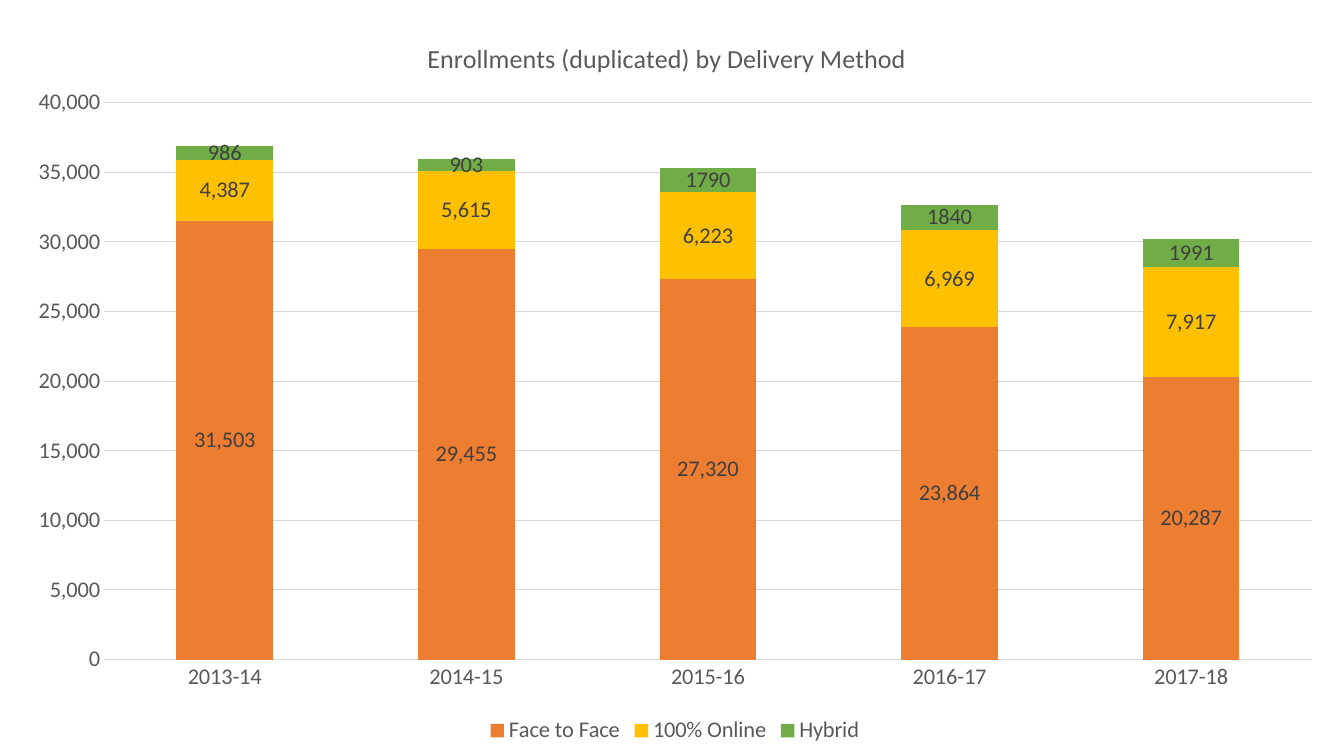
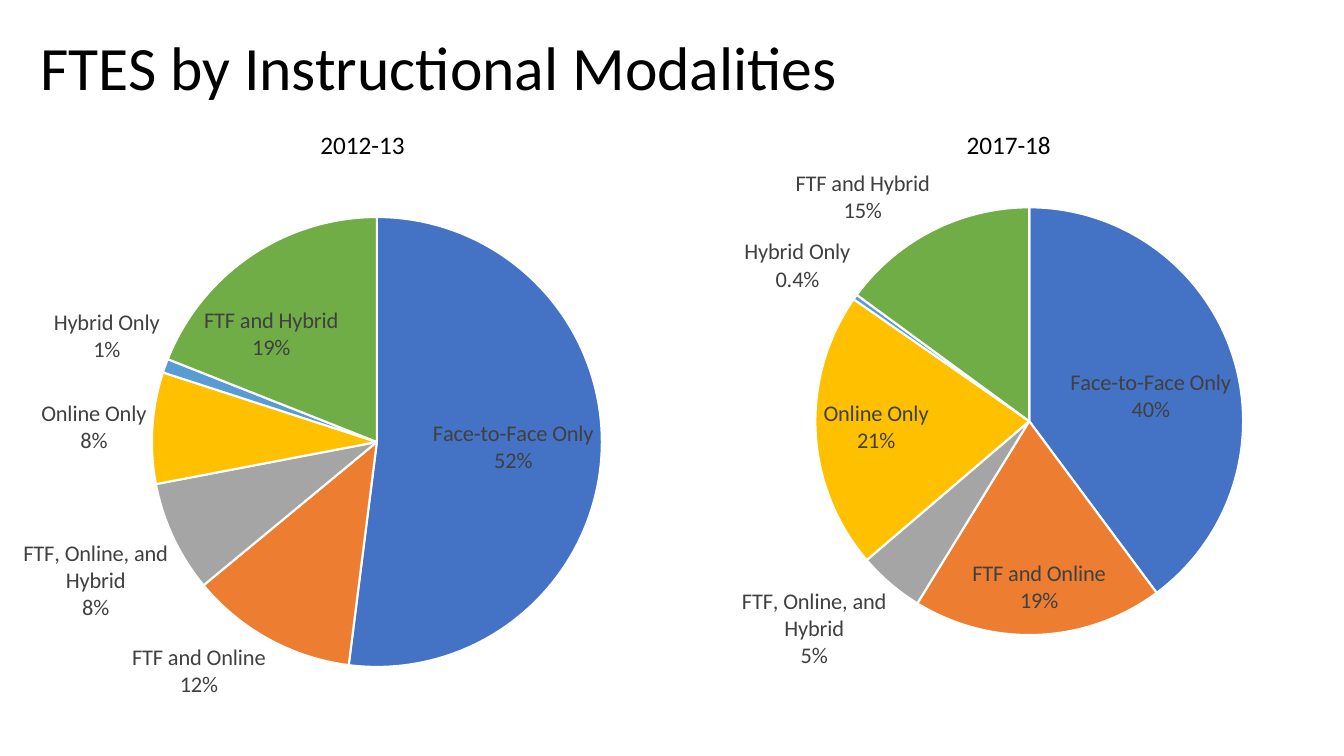
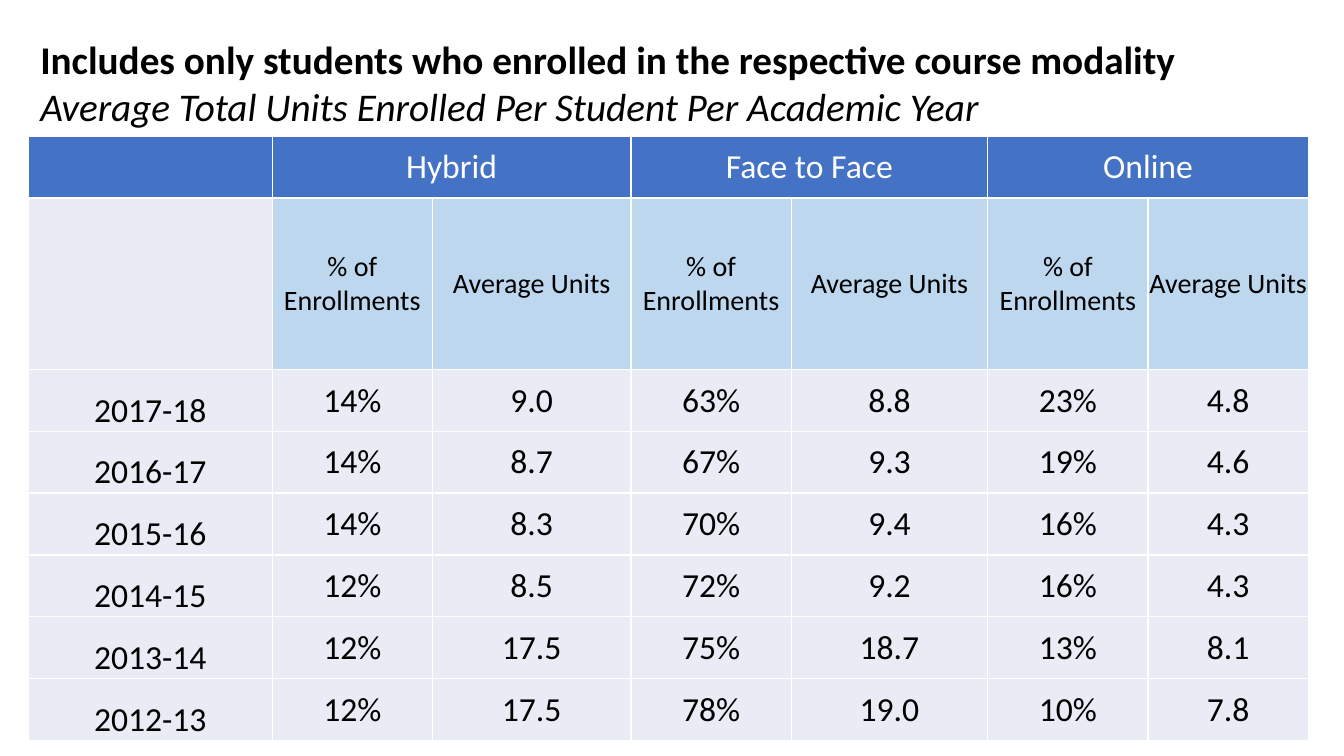
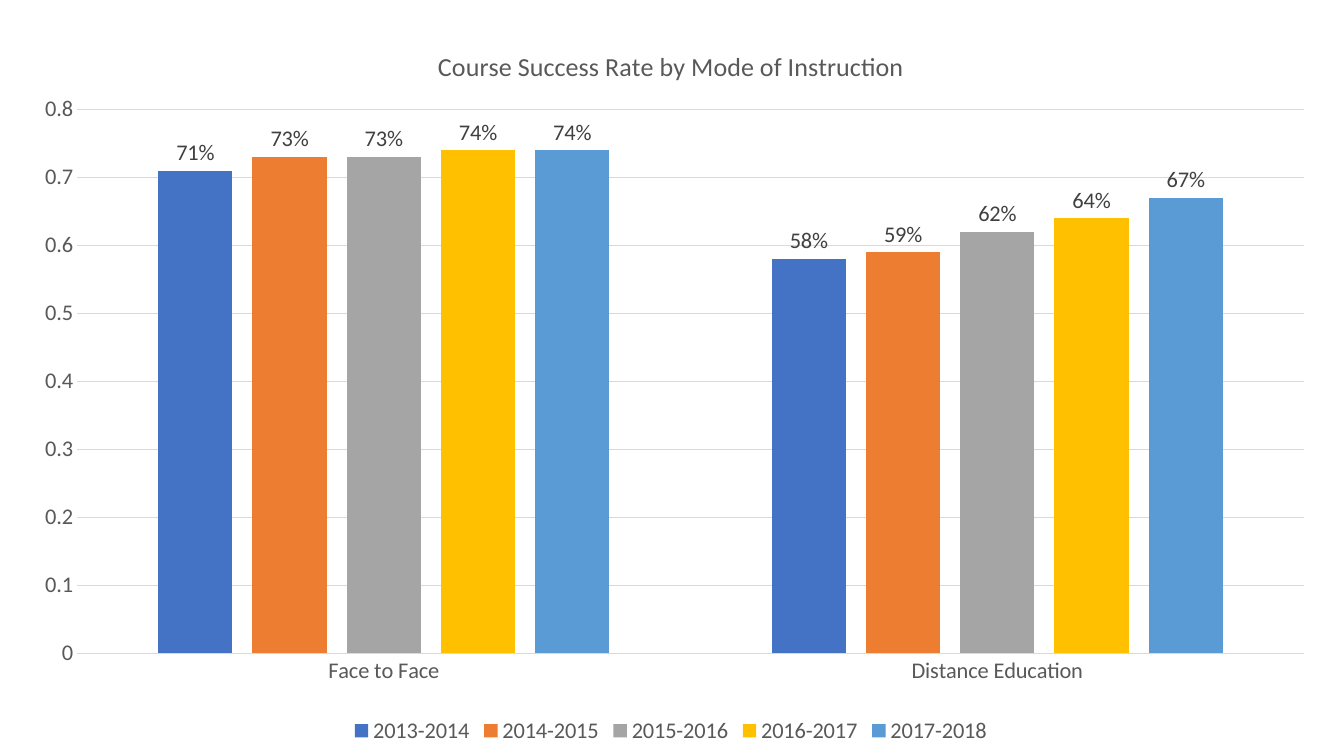
import lxml.etree
import pptx
import pptx.chart.data
import pptx.dml.color
import pptx.enum.chart
import pptx.enum.text
import pptx.oxml.ns
import pptx.util

Pt = pptx.util.Pt
qn = pptx.oxml.ns.qn
CHART = pptx.enum.chart.XL_CHART_TYPE
LABEL = pptx.enum.chart.XL_LABEL_POSITION
ANCHOR = pptx.enum.text.MSO_ANCHOR
ALIGN = pptx.enum.text.PP_ALIGN

FONT = "Calibri"
COLORS = {
    "black": "000000", "white": "FFFFFF", "grid": "D9D9D9",
    "axis": "595959", "label": "404040",
    "blue": "4472C4", "orange": "ED7D31", "gray": "A5A5A5",
    "gold": "FFC000", "sky": "5B9BD5", "green": "70AD47",
    "subhead": "BDD7EE", "cell": "E9EBF5",
}
TITLE_ONLY, BLANK = 5, 6

ENROLLMENTS = {
    "title": "Enrollments (duplicated) by Delivery Method",
    "title_at": (0.31, 0.04),
    "type": CHART.COLUMN_STACKED,
    "box": (7.9, 4.3, 948.2, 530.6),
    "plot": (0.07, 0.13, 0.91, 0.75),
    "categories": ["2013-14", "2014-15", "2015-16", "2016-17", "2017-18"],
    "series": [
        ("Face to Face", [31503, 29455, 27320, 23864, 20287], "orange", "#,##0"),
        ("100% Online", [4387, 5615, 6223, 6969, 7917], "gold", "#,##0"),
        ("Hybrid", [986, 903, 1790, 1840, 1991], "green", "General"),
    ],
    "gap": 150, "overlap": 100, "label_position": LABEL.CENTER,
    "axis": (40000, 5000, "#,##0"),
}
SUCCESS = {
    "title": "Course Success Rate by Mode of Instruction",
    "title_at": (0.32, 0.04),
    "type": CHART.COLUMN_CLUSTERED,
    "box": (7.9, 10.1, 942.5, 524.9),
    "plot": (0.05, 0.13, 0.93, 0.74),
    "categories": ["Face to Face", "Distance Education"],
    "series": [
        ("2013-2014", [0.71, 0.58], "blue", "0%"),
        ("2014-2015", [0.73, 0.59], "orange", "0%"),
        ("2015-2016", [0.73, 0.62], "gray", "0%"),
        ("2016-2017", [0.74, 0.64], "gold", "0%"),
        ("2017-2018", [0.74, 0.67], "sky", "0%"),
    ],
    "gap": 219, "overlap": -27, "label_position": LABEL.OUTSIDE_END,
    "axis": (0.8, 0.1, "General"),
}

MODALITIES_TITLE = "FTES by Instructional Modalities"
MODALITIES = [
    ("Face-to-Face Only", "blue"), ("FTF and Online", "orange"),
    ("FTF, Online, and Hybrid", "gray"), ("Online Only", "gold"),
    ("Hybrid Only", "sky"), ("FTF and Hybrid", "green"),
]
PIES = [
    {"year": "2012-13", "year_left": 221.8, "box": (-32.4, 117.4, 563.8, 396.7),
     "plot": (0.25, 0.09, 0.57, 0.82), "values": [52, 12, 8, 8, 1, 19],
     "own_labels": {}},
    {"year": "2017-18", "year_left": 683.3, "box": (435.6, 103.7, 587.5, 402.5),
     "plot": (0.25, 0.11, 0.52, 0.76), "values": [40, 19, 5, 21, 0.4, 15],
     "own_labels": {4: "Hybrid Only\n0.4%"}},
]

UNITS_TITLE = ("Includes only students who enrolled in the respective course modality",
               "Average Total Units Enrolled Per Student Per Academic Year")
MODES = ["Hybrid", "Face to Face", "Online"]
MEASURES = ["% of Enrollments", "Average Units"]
UNITS = [
    ("2017-18", "14%", "9.0", "63%", "8.8", "23%", "4.8"),
    ("2016-17", "14%", "8.7", "67%", "9.3", "19%", "4.6"),
    ("2015-16", "14%", "8.3", "70%", "9.4", "16%", "4.3"),
    ("2014-15", "12%", "8.5", "72%", "9.2", "16%", "4.3"),
    ("2013-14", "12%", "17.5", "75%", "18.7", "13%", "8.1"),
    ("2012-13", "12%", "17.5", "78%", "19.0", "10%", "7.8"),
]
UNITS_LEFT, UNITS_TOP = 20.2, 97.2
UNITS_WIDTHS = [174.2, 114.5, 141.8, 114.5, 140.4, 114.5, 114.5]
UNITS_HEIGHTS = [44.2, 122.4] + [44.2] * len(UNITS)


def rgb(name):
    return pptx.dml.color.RGBColor.from_string(COLORS[name])


def points(numbers):
    return [Pt(number) for number in numbers]


def style_font(font, size, color, bold=False, italic=False):
    font.name, font.size, font.bold, font.italic = FONT, Pt(size), bold, italic
    font.color.rgb = rgb(color)


def style_paragraph(para, size, color, align=ALIGN.LEFT, bold=False, italic=False):
    para.alignment = align
    for span in para.runs:
        style_font(span.font, size, color, bold, italic)


def fill(target, color):
    target.fill.solid()
    target.fill.fore_color.rgb = rgb(color)


def set_layout(parent, index, **fractions):
    """Fix a chart part's place, as fractions of the chart area."""
    layout = parent.find(qn("c:layout"))
    if layout is None:
        layout = lxml.etree.Element(qn("c:layout"))
        parent.insert(index, layout)
    manual = lxml.etree.SubElement(layout, qn("c:manualLayout"))
    settings = {"xMode": "edge", "yMode": "edge", **fractions}
    if "w" in fractions:
        settings = {"layoutTarget": "inner", **settings}
    for name, value in settings.items():
        lxml.etree.SubElement(manual, qn("c:" + name)).set("val", str(value))


def add_chart(slide, kind, box, plot, categories, series):
    data = pptx.chart.data.CategoryChartData()
    data.categories = categories
    for name, values in series:
        data.add_series(name, values)
    chart = slide.shapes.add_chart(kind, *points(box), data).chart
    style_font(chart.font, 16, "black")
    set_layout(chart.element.find(".//" + qn("c:plotArea")), 0, **dict(zip("xywh", plot)))
    return chart


def style_labels(labels, position, number_format):
    style_font(labels.font, 16, "label")
    labels.position = position
    labels.number_format, labels.number_format_is_linked = number_format, False


def add_column_slide(deck, content):
    slide = deck.slides.add_slide(deck.slide_layouts[BLANK])
    chart = add_chart(slide, content["type"], content["box"], content["plot"],
                      content["categories"], [item[:2] for item in content["series"]])

    chart.has_title = True
    title = chart.chart_title
    title.text_frame.text = content["title"]
    style_paragraph(title.text_frame.paragraphs[0], 18.6, "axis", ALIGN.CENTER)
    set_layout(chart.element.find(".//" + qn("c:title")), 1,
               **dict(zip("xy", content["title_at"])))

    chart.has_legend = True
    chart.legend.position = pptx.enum.chart.XL_LEGEND_POSITION.BOTTOM
    chart.legend.include_in_layout = False
    style_font(chart.legend.font, 16, "axis")

    for axis in (chart.category_axis, chart.value_axis):
        axis.major_tick_mark = axis.minor_tick_mark = pptx.enum.chart.XL_TICK_MARK.NONE
        style_font(axis.tick_labels.font, 16, "axis")
    value_axis = chart.value_axis
    value_axis.minimum_scale = 0
    value_axis.maximum_scale, value_axis.major_unit, number_format = content["axis"]
    value_axis.tick_labels.number_format = number_format
    value_axis.tick_labels.number_format_is_linked = False
    value_axis.format.line.fill.background()
    for line in (chart.category_axis.format.line, value_axis.major_gridlines.format.line):
        line.color.rgb, line.width = rgb("grid"), Pt(0.75)

    plot = chart.plots[0]
    plot.vary_by_categories = False
    plot.gap_width, plot.overlap = content["gap"], content["overlap"]
    for series, (_, _, color, label_format) in zip(plot.series, content["series"]):
        fill(series.format, color)
        series.data_labels.show_value = True
        style_labels(series.data_labels, content["label_position"], label_format)


def add_pie(slide, pie):
    chart = add_chart(slide, CHART.PIE, pie["box"], pie["plot"],
                      [name for name, _ in MODALITIES], [("Series 1", pie["values"])])
    chart.has_title = chart.has_legend = False
    chart.plots[0].vary_by_categories = True
    series = chart.plots[0].series[0]
    for index, (_, color) in enumerate(MODALITIES):
        slice_format = series.points[index].format
        fill(slice_format, color)
        slice_format.line.color.rgb, slice_format.line.width = rgb("white"), Pt(1.5)

    labels = series.data_labels
    labels.show_value = False
    labels.show_category_name = labels.show_percentage = True
    style_labels(labels, LABEL.BEST_FIT, "0%")
    last_flag = chart.element.find(".//" + qn("c:dLbls") + "/" + qn("c:showBubbleSize"))
    separator = lxml.etree.Element(qn("c:separator"))
    separator.text = "\n"
    last_flag.addnext(separator)
    for index, text in pie["own_labels"].items():
        label = series.points[index].data_label
        label.text_frame.text = text
        label.position = LABEL.BEST_FIT
        for para in label.text_frame.paragraphs:
            style_paragraph(para, 16, "label", ALIGN.CENTER)


def add_titled_slide(deck, text, box, anchor):
    slide = deck.slides.add_slide(deck.slide_layouts[TITLE_ONLY])
    title = slide.shapes.title
    title.left, title.top, title.width, title.height = points(box)
    frame = title.text_frame
    frame.text = text
    frame.word_wrap, frame.vertical_anchor = True, anchor
    frame.auto_size = pptx.enum.text.MSO_AUTO_SIZE.NONE
    return slide, frame.paragraphs


def add_modalities_slide(deck):
    slide, paragraphs = add_titled_slide(
        deck, MODALITIES_TITLE, (21.6, 19.4, 828, 62.6), ANCHOR.MIDDLE)
    style_paragraph(paragraphs[0], 44, "black")
    paragraphs[0].line_spacing = 0.9
    for pie in PIES:
        add_pie(slide, pie)
    for pie in PIES:
        box = slide.shapes.add_textbox(*points((pie["year_left"], 88.6, 75.6, 28.8)))
        box.text_frame.text = pie["year"]
        box.text_frame.word_wrap = False
        style_paragraph(box.text_frame.paragraphs[0], 18, "black")


def style_cell(cell, color):
    properties = cell._tc.get_or_add_tcPr()
    for side in "LRTB":
        line = lxml.etree.SubElement(properties, qn("a:ln" + side), w=str(Pt(1)))
        solid = lxml.etree.SubElement(line, qn("a:solidFill"))
        lxml.etree.SubElement(solid, qn("a:srgbClr"), val=COLORS["white"])
    fill(cell, color)
    cell.margin_left = cell.margin_right = cell.margin_top = Pt(0.7)
    cell.margin_bottom = 0


def add_units_slide(deck):
    slide, paragraphs = add_titled_slide(
        deck, "\n".join(UNITS_TITLE), (21.6, 21.6, 912, 74.9), ANCHOR.TOP)
    style_paragraph(paragraphs[0], 28, "black", bold=True)
    style_paragraph(paragraphs[1], 28, "black", italic=True)

    header = [""] + [text for mode in MODES for text in (mode, "")]
    rows = [header, [""] + MEASURES * len(MODES), *UNITS]
    table = slide.shapes.add_table(
        len(rows), len(header),
        *points((UNITS_LEFT, UNITS_TOP, sum(UNITS_WIDTHS), sum(UNITS_HEIGHTS)))).table
    table.first_row = table.horz_banding = False
    for column, width in zip(table.columns, UNITS_WIDTHS):
        column.width = Pt(width)
    for row, height in zip(table.rows, UNITS_HEIGHTS):
        row.height = Pt(height)

    for r, texts in enumerate(rows):
        for c, text in enumerate(texts):
            cell = table.cell(r, c)
            color = "blue" if r == 0 else "subhead" if r == 1 and c else "cell"
            style_cell(cell, color)
            cell.vertical_anchor = ANCHOR.BOTTOM if r > 1 and c == 0 else ANCHOR.MIDDLE
            if text:
                cell.text = text
                style_paragraph(cell.text_frame.paragraphs[0], 20 if r == 1 else 24,
                                "black" if r else "white", ALIGN.CENTER)
    for c in range(1, len(header), len(MEASURES)):
        table.cell(0, c).merge(table.cell(0, c + len(MEASURES) - 1))


def main():
    deck = pptx.Presentation()
    deck.slide_width, deck.slide_height = Pt(960), Pt(540)
    add_column_slide(deck, ENROLLMENTS)
    add_modalities_slide(deck)
    add_units_slide(deck)
    add_column_slide(deck, SUCCESS)
    deck.save("out.pptx")


if __name__ == "__main__":
    main()
